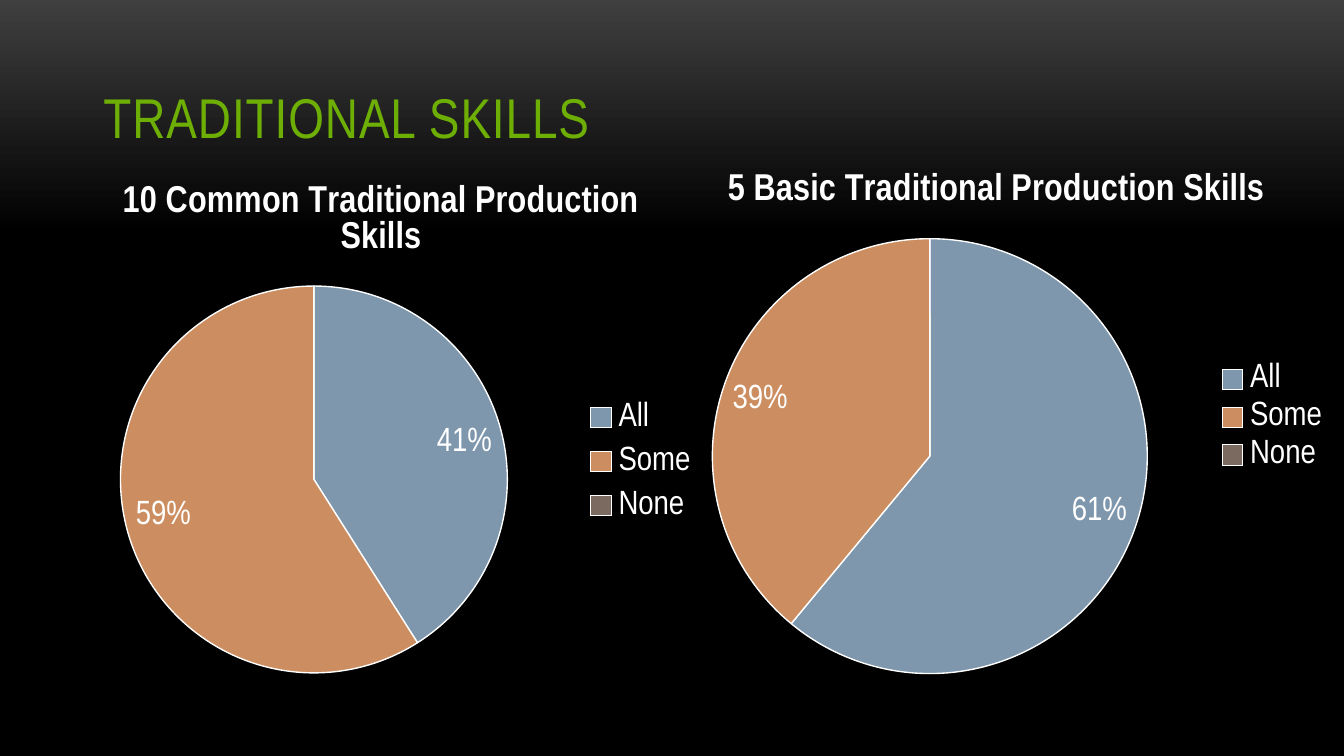
import copy
from dataclasses import dataclass

import lxml.etree
import pptx
import pptx.chart.data
import pptx.dml.color
import pptx.enum.chart
import pptx.enum.text
import pptx.oxml
import pptx.oxml.ns
import pptx.util

FONT = "Arial Narrow"
WHITE = "FFFFFF"
GREEN = "6EAF05"
ANSWERS = {"All": "7E97AD", "Some": "CC8E60", "None": "7A6A60"}
BACKDROP = ((0, "3F3F3F"), (0.31, "000000"), (1, "000000"))
WIDTH = pptx.util.Inches(10)
HEIGHT = WIDTH * 9 // 16


@dataclass
class Area:
    left: float
    top: float
    width: float
    height: float

    def on_slide(self) -> tuple[int, int, int, int]:
        return (int(self.left * WIDTH), int(self.top * HEIGHT),
                int(self.width * WIDTH), int(self.height * HEIGHT))


@dataclass
class SkillPie:
    title: str
    shares: tuple[int, int, int]
    frame: Area
    plot: Area
    legend: Area


def colour(value: str) -> pptx.dml.color.RGBColor:
    return pptx.dml.color.RGBColor.from_string(value)


def style(font, size: float, value: str, bold: bool = False) -> None:
    font.name = FONT
    font.size = pptx.util.Pt(size)
    font.bold = bold
    font.color.rgb = colour(value)


def manual_layout(area: Area, inner: bool = False):
    target = '<c:layoutTarget val="inner"/>' if inner else ""
    return pptx.oxml.parse_xml(
        f'<c:layout {pptx.oxml.ns.nsdecls("c")}><c:manualLayout>{target}'
        '<c:xMode val="edge"/><c:yMode val="edge"/>'
        f'<c:x val="{area.left}"/><c:y val="{area.top}"/>'
        f'<c:w val="{area.width}"/><c:h val="{area.height}"/>'
        '</c:manualLayout></c:layout>')


def paint_backdrop(slide) -> None:
    fill = slide.background.fill
    fill.gradient()
    fill.gradient_angle = 270
    stops = slide.element.xpath(".//p:bg//a:gsLst")[0]
    stops.append(copy.deepcopy(stops[-1]))
    for stop, (position, value) in zip(fill.gradient_stops, BACKDROP):
        stop.position = position
        stop.color.rgb = colour(value)


def write_title(slide, text: str) -> None:
    title = slide.shapes.title
    title.left, title.top, title.width, title.height = Area(
        0.067, 0.04, 0.867, 0.167).on_slide()
    frame = title.text_frame
    frame.text = text
    frame.word_wrap = True
    frame.vertical_anchor = pptx.enum.text.MSO_ANCHOR.BOTTOM
    heading = frame.paragraphs[0]
    heading.alignment = pptx.enum.text.PP_ALIGN.LEFT
    run = heading.runs[0]
    style(run.font, 30, GREEN)
    run.font._element.set("spc", "50")


def draw_pie(slide, pie: SkillPie) -> None:
    data = pptx.chart.data.CategoryChartData()
    data.categories = list(ANSWERS)
    data.add_series("Series 1", pie.shares)
    chart = slide.shapes.add_chart(
        pptx.enum.chart.XL_CHART_TYPE.PIE, *pie.frame.on_slide(), data).chart
    style(chart.font, 18, WHITE)

    chart.has_title = True
    heading = chart.chart_title.text_frame
    heading.text = pie.title
    style(heading.paragraphs[0].runs[0].font, 20, WHITE, bold=True)

    chart.has_legend = True
    chart.legend.position = pptx.enum.chart.XL_LEGEND_POSITION.RIGHT
    chart.legend.include_in_layout = False
    style(chart.legend.font, 18, WHITE)
    legend = chart.legend._element
    for old in legend.xpath("c:layout"):
        legend.remove(old)
    legend.xpath("c:legendPos")[0].addnext(manual_layout(pie.legend))

    plot_area = chart._chartSpace.xpath(".//c:plotArea")[0]
    for old in plot_area.xpath("c:layout"):
        plot_area.remove(old)
    plot_area.insert(0, manual_layout(pie.plot, inner=True))

    chart.plots[0].vary_by_categories = True
    series = chart.plots[0].series[0]
    for index, value in enumerate(ANSWERS.values()):
        slice_format = series.points[index].format
        slice_format.fill.solid()
        slice_format.fill.fore_color.rgb = colour(value)
        slice_format.line.color.rgb = colour(WHITE)
        slice_format.line.width = pptx.util.Pt(0.75)

    labels = series.data_labels
    labels.show_value = False
    labels.show_percentage = True
    labels.number_format = "0%"
    labels.number_format_is_linked = False
    labels.position = pptx.enum.chart.XL_LABEL_POSITION.INSIDE_END
    style(labels.font, 18, WHITE)
    hidden = pptx.oxml.parse_xml(
        f'<c:dLbl {pptx.oxml.ns.nsdecls("c")}>'
        '<c:idx val="2"/><c:delete val="1"/></c:dLbl>')
    labels._element.insert(0, hidden)


PIES = (
    SkillPie("10 Common Traditional Production Skills", (41, 59, 0),
             Area(0, 0.205, 0.567, 0.711),
             Area(0.157, 0.244, 0.51, 0.72), Area(0.766, 0.436, 0.15, 0.27)),
    SkillPie("5 Basic Traditional Production Skills", (61, 39, 0),
             Area(0.483, 0.189, 0.517, 0.726),
             Area(0.091, 0.174, 0.626, 0.794), Area(0.817, 0.39, 0.16, 0.22)),
)


def main() -> None:
    deck = pptx.Presentation()
    deck.slide_width, deck.slide_height = WIDTH, HEIGHT
    slide = deck.slides.add_slide(deck.slide_layouts[5])
    paint_backdrop(slide)
    write_title(slide, "TRADITIONAL SKILLS")
    for pie in PIES:
        draw_pie(slide, pie)
    deck.save("out.pptx")


if __name__ == "__main__":
    main()
